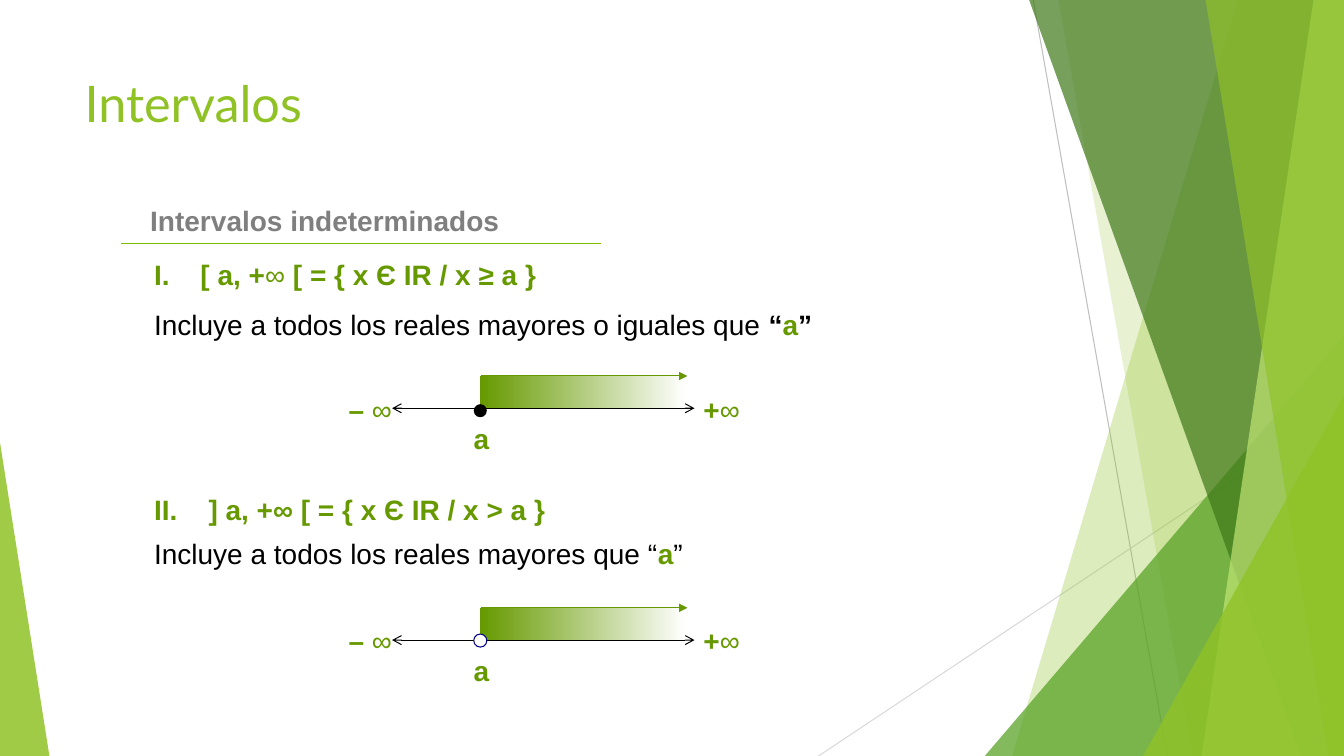
import pptx
import pptx.dml.color
import pptx.enum.shapes
import pptx.enum.text
import pptx.oxml
import pptx.oxml.ns
import pptx.util
from lxml import etree

CELL = pptx.util.Inches(0.1)
COLUMNS, ROWS = 133.33, 75
SHAPES = pptx.enum.shapes.MSO_SHAPE
ANCHORS = pptx.enum.text.MSO_ANCHOR
COLOURS = {
    "lime": "90C226", "leaf": "54A021", "forest": "3F7819", "pale": "C0E474",
    "olive": "669900", "rule": "84BD00", "grey": "7F7F7F", "silver": "BFBFBF",
    "mist": "D9D9D9", "black": "000000", "white": "FFFFFF", "navy": "000080",
}


def cells(*counts):
    """Turn grid counts into slide lengths."""
    return [round(count * CELL) for count in counts]


def colour(name):
    """Look up a colour by name."""
    return pptx.dml.color.RGBColor.from_string(COLOURS[name])


def add_child(parent, tag, **attributes):
    """Append a drawing element with the given attributes."""
    child = etree.SubElement(parent, pptx.oxml.ns.qn(tag))
    for name, value in attributes.items():
        child.set(name, str(value))
    return child


def paint(shape, name, opacity=100):
    """Give a shape a plain fill without outline or shadow."""
    shape.shadow.inherit = False
    shape.line.fill.background()
    shape.fill.solid()
    shape.fill.fore_color.rgb = colour(name)
    if opacity < 100:
        tint = shape.fill._xPr.find(".//" + pptx.oxml.ns.qn("a:srgbClr"))
        add_child(tint, "a:alpha", val=opacity * 1000)


def add_line(page, start, end, name, head=None, tail=None):
    """Draw a thin line with optional arrowheads."""
    line = page.shapes.add_connector(
        pptx.enum.shapes.MSO_CONNECTOR.STRAIGHT, *cells(*start, *end))
    line.line.color.rgb = colour(name)
    line.line.width = pptx.util.Pt(0.75)
    outline = line.line._get_or_add_ln()
    for tag, arrow in (("a:headEnd", head), ("a:tailEnd", tail)):
        if arrow:
            add_child(outline, tag, type=arrow)
    add_child(line._element.spPr, "a:effectLst")


def write(frame, runs, size=20, font="Arial"):
    """Fill the first paragraph with styled runs."""
    para = frame.paragraphs[0]
    for text, name, bold in runs:
        span = para.add_run()
        span.text = text
        span.font.name = font
        span.font.size = pptx.util.Pt(size)
        span.font.bold = bold
        span.font.color.rgb = colour(name)
    return para


def add_text(page, box, runs, anchor=ANCHORS.TOP, hang=0):
    """Place a wrapped text box, hanging its first line if asked."""
    frame = page.shapes.add_textbox(*cells(*box)).text_frame
    frame.word_wrap = True
    frame.vertical_anchor = anchor
    para = write(frame, runs)
    if hang:
        margin, = cells(hang)
        settings = para._p.get_or_add_pPr()
        settings.set("marL", str(margin))
        settings.set("indent", str(-margin))
    return frame


def add_backdrop(page, box):
    """Draw the overlapping green facets at the edges of the box."""
    left, top, width, height = box
    right, bottom = left + width, top + height

    def facet(upper, lower, name, opacity):
        builder = page.shapes.build_freeform(*cells(left + upper, top))
        corners = [(right, top), (right, bottom), (left + lower, bottom)]
        builder.add_line_segments([cells(*corner) for corner in corners])
        paint(builder.convert_to_shape(), name, opacity)

    def triangle(start, span, rise, apex, name, opacity):
        shape = page.shapes.add_shape(
            SHAPES.ISOSCELES_TRIANGLE, *cells(left + start, bottom - rise, span, rise))
        shape.adjustments[0] = apex
        paint(shape, name, opacity)

    add_line(page, (left + 102.5, top), (left + 115.8, bottom), "silver")
    add_line(page, (right, top + 40.3), (left + 81.2, bottom), "mist")
    facet(122.8, 100.4, "lime", 30)
    facet(105, 118.3, "lime", 20)
    triangle(97.7, 35.63, 41.7, 1, "leaf", 72)
    facet(102.1, 129.1, "forest", 70)
    facet(130.3, 119.2, "pale", 70)
    facet(119.6, 131.8, "lime", 65)
    triangle(113.4, 19.93, 35.7, 1, "lime", 80)
    triangle(0, 4.9, 31.1, 0, "lime", 85)


def add_title(page, box):
    """Place the slide title above the backdrop."""
    title = page.shapes.title
    title.left, title.top, title.width, title.height = cells(*box)
    frame = title.text_frame
    frame.auto_size = pptx.enum.text.MSO_AUTO_SIZE.NONE
    frame.vertical_anchor = ANCHORS.TOP
    para = write(frame, [("Intervalos", "lime", False)], 36, "Lato")
    para.alignment = pptx.enum.text.PP_ALIGN.LEFT
    page.shapes._spTree.append(title._element)


def add_heading(page, box):
    """Write the section heading with a rule below it."""
    left, top, width, height = box
    frame = add_text(page, box, [("Intervalos indeterminados", "grey", True)])
    frame.margin_left, = cells(2.5)
    rule = top + height + 0.2
    add_line(page, (left - 0.4, rule), (left + 47.2, rule), "rule")


def add_statement(page, box, formula, hang, meaning, gap):
    """Write an interval formula and its meaning a gap below."""
    left, top, width, height = box
    add_text(page, box, formula, ANCHORS.MIDDLE, hang)
    add_text(page, (left, top + gap, width, height), meaning, ANCHORS.MIDDLE)


def add_number_line(page, box, closed):
    """Draw the ray from a to infinity, with a closed or open endpoint."""
    left, top, width, height = box
    start, axis = left + 14, top + 3.2
    band = page.shapes.add_shape(SHAPES.RECTANGLE, *cells(start, top, 20.5, 3.2))
    paint(band, "white")
    band.fill.gradient()
    band.fill.gradient_angle = 0
    for stop, name in zip(band.fill.gradient_stops, ("olive", "white")):
        stop.color.rgb = colour(name)
    for stop, position in zip(band.fill.gradient_stops, (0, 1)):
        stop.position = position
    add_line(page, (start + 0.1, top), (start + 20.6, top), "olive", tail="triangle")
    add_line(page, (left + 5.3, axis), (left + 35.3, axis), "black", "arrow", "arrow")
    add_text(page, (start - 1.6, top + 4, 3.9, 4.4), [("a", "olive", True)])
    for sign, offset in (("– ", 0), ("+", width - 6.3)):
        add_text(page, (left + offset, top + 1.1, 6.3, 4.4),
                 [(sign, "olive", True), ("∞", "olive", False)])
    drop = 2.8 if closed else 2.6
    dot = page.shapes.add_shape(SHAPES.OVAL, *cells(start - 0.6, top + drop, 1.3, 1.3))
    paint(dot, "black" if closed else "white")
    if not closed:
        dot.line.color.rgb = colour("navy")
        dot.line.width = pptx.util.Pt(0.75)


def main():
    """Build and save the slide."""
    deck = pptx.Presentation()
    deck.slide_width, deck.slide_height = cells(COLUMNS, ROWS)
    page = deck.slides.add_slide(deck.slide_layouts.get_by_name("Title Only"))
    add_backdrop(page, (0, 0, COLUMNS, ROWS))
    add_title(page, (7.4, 6.7, 94, 14.4))
    add_heading(page, (12.4, 19.7, 89.8, 4.3))
    add_statement(
        page, (14.3, 25, 76.1, 4.4),
        [("I.\t[ a, +", "olive", True), ("∞ ", "olive", False),
         ("[ = { x Є IR / x ≥ a }", "olive", True)], 4.6,
        [("Incluye a todos los reales mayores o iguales que ", "black", False),
         ("“", "black", True), ("a", "olive", True), ("”", "black", True)], 5)
    add_statement(
        page, (14.3, 48.3, 76.1, 4.4),
        [("II.\t] a, +∞ [ = { x Є IR / x > a }", "olive", True)], 5.4,
        [("Incluye a todos los reales mayores que “", "black", False),
         ("a", "olive", True), ("”", "black", False)], 4.4)
    for top, closed in ((37.3, True), (60.3, False)):
        add_number_line(page, (33.6, top, 41.5, 8.4), closed)
    deck.save("out.pptx")


if __name__ == "__main__":
    main()
